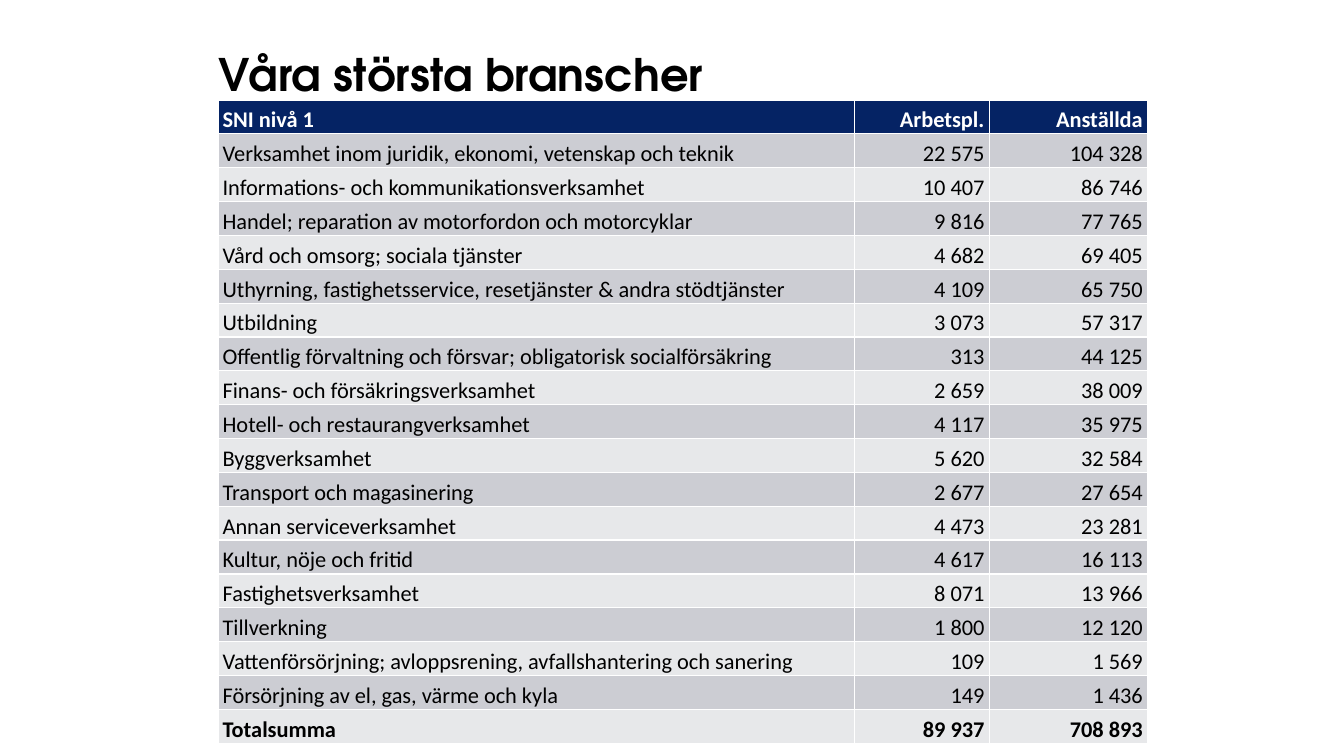
import dataclasses

import pptx
import pptx.dml.color
import pptx.enum.text
import pptx.util

Cm = pptx.util.Cm
Pt = pptx.util.Pt
RGB = pptx.dml.color.RGBColor.from_string
ALIGN = pptx.enum.text.PP_ALIGN
ANCHOR = pptx.enum.text.MSO_ANCHOR


@dataclasses.dataclass(frozen=True)
class Theme:
    title_font: str = "TeX Gyre Adventor"
    table_font: str = "Calibri"
    title_size: int = 32
    table_size: int = 16
    text: str = "000000"
    header_text: str = "FFFFFF"
    header_fill: str = "052364"
    band_fills: tuple = ("CCCDD3", "E7E8EA")


THEME = Theme()

# Shared left edge and width of title and table
LEFT = Cm(5.51)
COLUMN_WIDTHS = (Cm(16.03), Cm(3.4), Cm(3.99))
WIDTH = sum(COLUMN_WIDTHS)
TABLE_TOP = Cm(2.52)
TABLE_HEIGHT = Cm(16.21)

INDUSTRIES = [
    ("SNI nivå 1", "Arbetspl.", "Anställda"),
    ("Verksamhet inom juridik, ekonomi, vetenskap och teknik", "22 575", "104 328"),
    ("Informations- och kommunikationsverksamhet", "10 407", "86 746"),
    ("Handel; reparation av motorfordon och motorcyklar", "9 816", "77 765"),
    ("Vård och omsorg; sociala tjänster", "4 682", "69 405"),
    ("Uthyrning, fastighetsservice, resetjänster & andra stödtjänster", "4 109", "65 750"),
    ("Utbildning", "3 073", "57 317"),
    ("Offentlig förvaltning och försvar; obligatorisk socialförsäkring", "313", "44 125"),
    ("Finans- och försäkringsverksamhet", "2 659", "38 009"),
    ("Hotell- och restaurangverksamhet", "4 117", "35 975"),
    ("Byggverksamhet", "5 620", "32 584"),
    ("Transport och magasinering", "2 677", "27 654"),
    ("Annan serviceverksamhet", "4 473", "23 281"),
    ("Kultur, nöje och fritid", "4 617", "16 113"),
    ("Fastighetsverksamhet", "8 071", "13 966"),
    ("Tillverkning", "1 800", "12 120"),
    ("Vattenförsörjning; avloppsrening, avfallshantering och sanering", "109", "1 569"),
    ("Försörjning av el, gas, värme och kyla", "149", "1 436"),
    ("Totalsumma", "89 937", "708 893"),
]


def add_run(p, text, font, size, color, bold):
    r = p.add_run()
    r.text = text
    r.font.name = font
    r.font.size = Pt(size)
    r.font.bold = bold
    r.font.color.rgb = RGB(color)


def set_title(s, text):
    sp = s.shapes.title
    sp.left, sp.top, sp.width, sp.height = LEFT, Cm(-0.56), WIDTH, Cm(3.1)
    tf = sp.text_frame
    tf.auto_size = pptx.enum.text.MSO_AUTO_SIZE.NONE
    tf.word_wrap = True
    tf.vertical_anchor = ANCHOR.BOTTOM
    tf.margin_left = tf.margin_top = tf.margin_right = tf.margin_bottom = 0
    p = tf.paragraphs[0]
    p.alignment = ALIGN.LEFT
    add_run(p, text, THEME.title_font, THEME.title_size, THEME.text, True)


def fill_cell(cell, text, align, fill, color, bold):
    cell.margin_left, cell.margin_right = Cm(0.1), Cm(0.13)
    cell.margin_top = cell.margin_bottom = 0
    cell.vertical_anchor = ANCHOR.BOTTOM
    cell.fill.solid()
    cell.fill.fore_color.rgb = RGB(fill)
    p = cell.text_frame.paragraphs[0]
    p.alignment = align
    add_run(p, text, THEME.table_font, THEME.table_size, color, bold)


def add_industry_table(s, rows):
    # The default table style supplies the white rules between cells
    table = s.shapes.add_table(len(rows), len(COLUMN_WIDTHS), LEFT, TABLE_TOP,
                               WIDTH, TABLE_HEIGHT).table
    for column, width in zip(table.columns, COLUMN_WIDTHS):
        column.width = width
    for i, row in enumerate(rows):
        table.rows[i].height = TABLE_HEIGHT // len(rows)
        is_header = i == 0
        fill = THEME.header_fill if is_header else THEME.band_fills[(i - 1) % 2]
        color = THEME.header_text if is_header else THEME.text
        bold = is_header or i == len(rows) - 1
        for j, text in enumerate(row):
            align = ALIGN.RIGHT if j else ALIGN.LEFT
            fill_cell(table.cell(i, j), text, align, fill, color, bold)


def main():
    prs = pptx.Presentation()
    prs.slide_width, prs.slide_height = Cm(33.87), Cm(19.05)
    s = prs.slides.add_slide(prs.slide_layouts.get_by_name("Title Only"))
    set_title(s, "Våra största branscher")
    add_industry_table(s, INDUSTRIES)
    prs.save("out.pptx")


if __name__ == "__main__":
    main()
